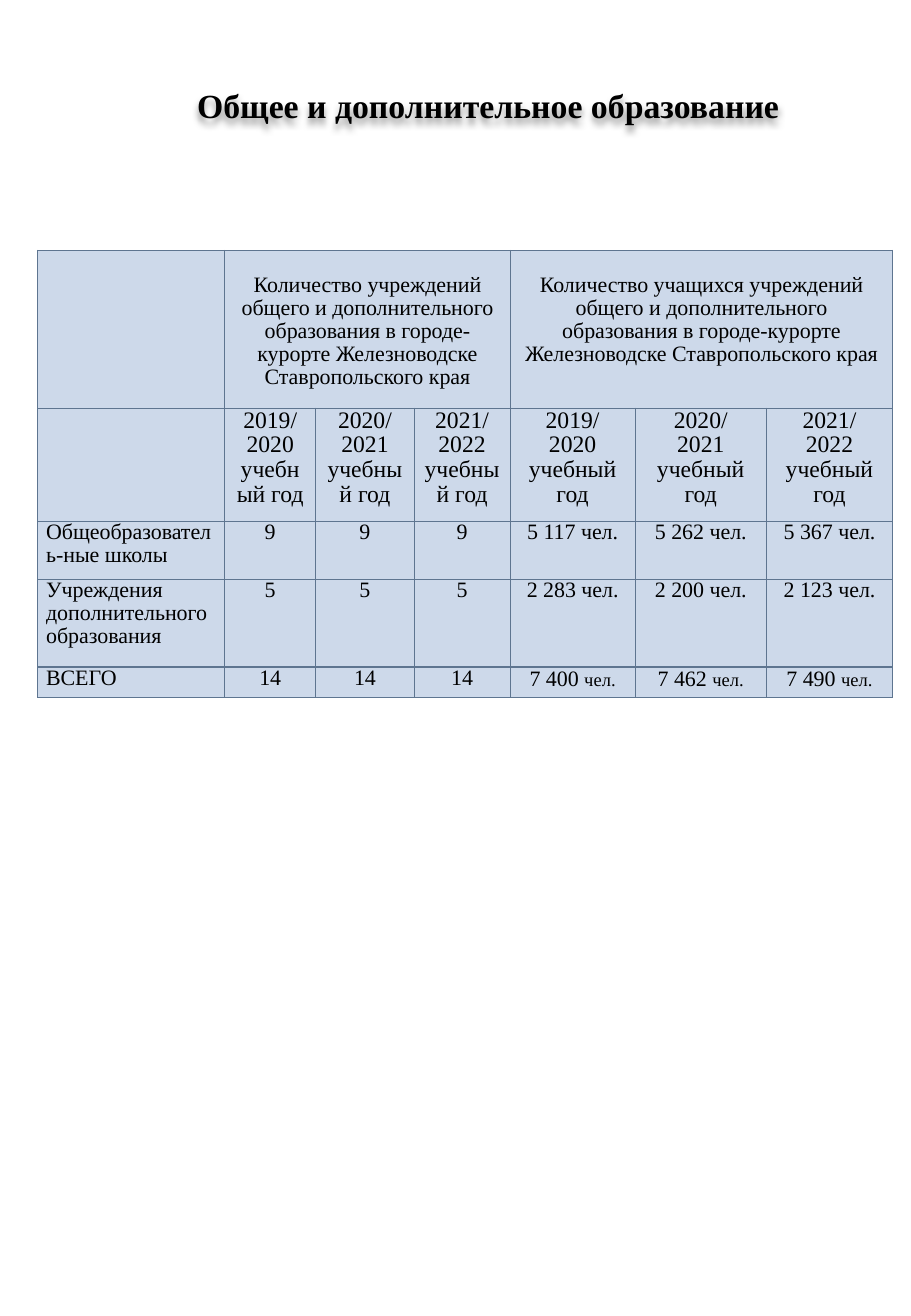
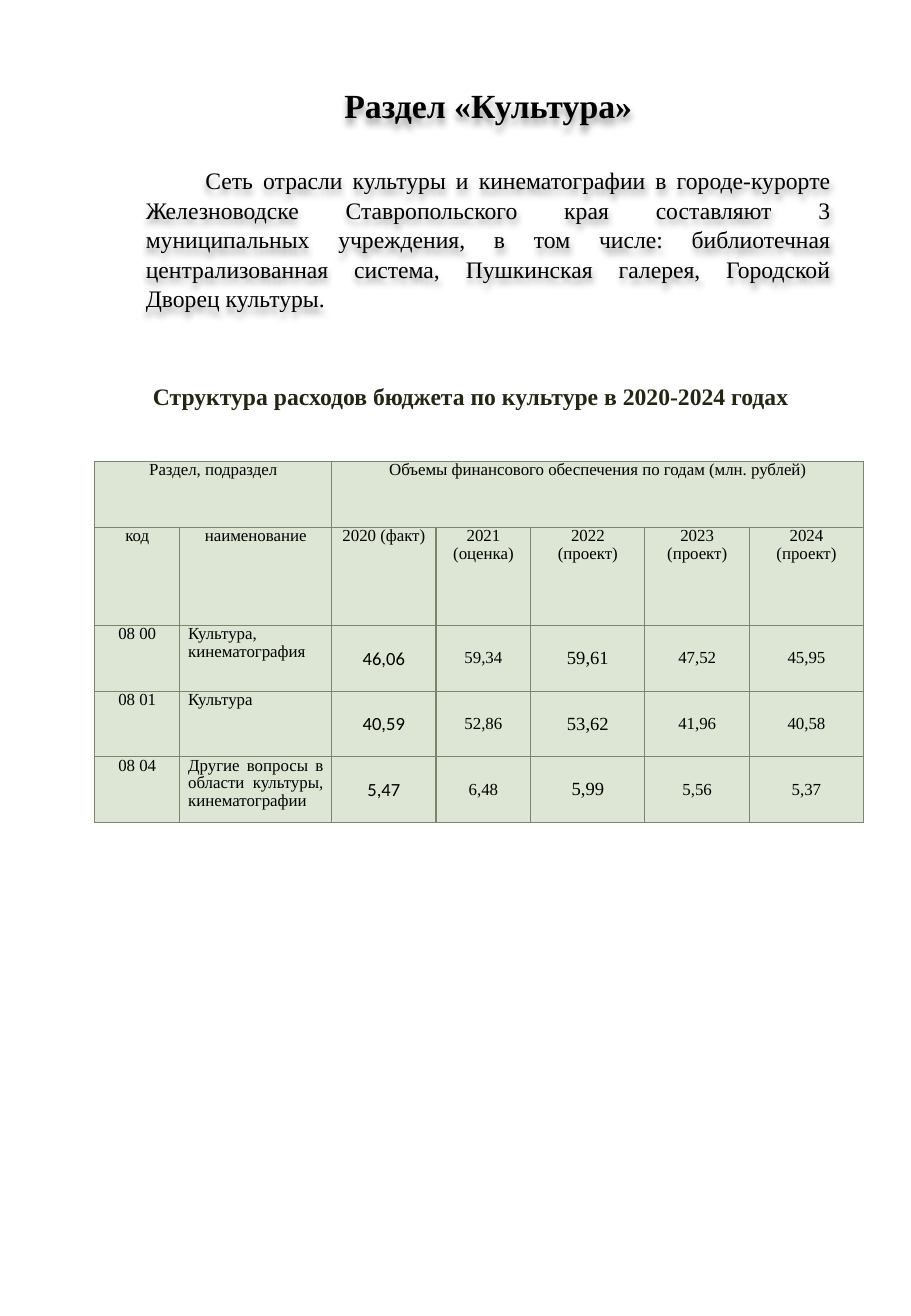
from lxml import etree
from pptx import Presentation
from pptx.dml.color import RGBColor
from pptx.enum.text import MSO_ANCHOR, MSO_AUTO_SIZE, PP_ALIGN
from pptx.oxml.ns import qn
from pptx.util import Inches, Pt

CENTER, JUSTIFY, LEFT = PP_ALIGN.CENTER, PP_ALIGN.JUSTIFY, PP_ALIGN.LEFT
TOP, MIDDLE = MSO_ANCHOR.TOP, MSO_ANCHOR.MIDDLE
NO_FIT = MSO_AUTO_SIZE.NONE
SERIF, SANS = "Times New Roman", "Calibri"
BLACK = RGBColor(0, 0, 0)
OLIVE = RGBColor(0x22, 0x26, 0x13)
BLUE_FILL = RGBColor(0xCD, 0xD9, 0xEA)
BLUE_LINE = RGBColor(0x5E, 0x75, 0x90)
GREEN_FILL = RGBColor(0xDD, 0xE6, 0xD4)
GREEN_LINE = RGBColor(0x7A, 0x86, 0x6C)
TITLE_BOX = (1.1, 0.65, 5.84, 0.5)
TITLE_ONLY, TITLE_AND_BODY = 5, 1


def add_span(para, text, size, font=SERIF, color=BLACK, bold=False):
    """Add one formatted run to a paragraph."""
    span = para.add_run()
    span.text = text
    span.font.name = font
    span.font.size = Pt(size)
    span.font.color.rgb = color
    span.font.bold = bold


def place(shape, box):
    """Move a shape to a box given in inches."""
    shape.left, shape.top, shape.width, shape.height = map(Inches, box)


def add_shadow(shape):
    """Give the text of an unfilled shape a soft shadow below it."""
    effects = etree.SubElement(shape.element.spPr, qn("a:effectLst"))
    shadow = etree.SubElement(effects, qn("a:outerShdw"), blurRad="50800",
                              dist="38100", dir="5400000", rotWithShape="0")
    color = etree.SubElement(shadow, qn("a:srgbClr"), val="000000")
    etree.SubElement(color, qn("a:alpha"), val="40000")


def fill_placeholder(shape, box, text, size, align, bold=False):
    """Place a placeholder and write one shadowed paragraph in it."""
    place(shape, box)
    frame = shape.text_frame
    frame.word_wrap = True
    frame.auto_size = NO_FIT
    frame.vertical_anchor = TOP
    para = frame.paragraphs[0]
    para.alignment = align
    para.space_before = Pt(0)
    add_span(para, text, size, bold=bold)
    add_shadow(shape)
    return para


def add_page(deck, layout, title):
    """Add a slide with the shared title style."""
    page = deck.slides.add_slide(deck.slide_layouts[layout])
    fill_placeholder(page.shapes.title, TITLE_BOX, title, 20, CENTER, bold=True)
    return page


def add_intro(page, box, text):
    """Write the justified introduction in the body placeholder."""
    para = fill_placeholder(page.placeholders[1], box, text, 14, JUSTIFY)
    para.line_spacing = 1.04
    props = para._p.get_or_add_pPr()
    props.set("marL", "0")
    props.set("indent", str(Inches(0.49)))
    etree.SubElement(props, qn("a:buNone"))


def add_caption(page, box, text):
    """Add the bold heading above a table."""
    caption = page.shapes.add_textbox(*map(Inches, box))
    frame = caption.text_frame
    frame.word_wrap = False
    frame.vertical_anchor = MIDDLE
    para = frame.paragraphs[0]
    para.alignment = LEFT
    add_span(para, text, 14, color=OLIVE, bold=True)


def set_borders(cell, color):
    """Draw a thin line on all four sides of a cell."""
    props = cell._tc.get_or_add_tcPr()
    for index, side in enumerate(("lnL", "lnR", "lnT", "lnB")):
        line = etree.Element(qn("a:" + side), w=str(Pt(0.75)))
        solid = etree.SubElement(line, qn("a:solidFill"))
        etree.SubElement(solid, qn("a:srgbClr"), val=str(color))
        props.insert(index, line)


def add_grid(page, box, widths, heights, fill, line):
    """Add a table with uniform fill, borders and margins."""
    shape = page.shapes.add_table(len(heights), len(widths), *map(Inches, box))
    table = shape.table
    for column, width in zip(table.columns, widths):
        column.width = Inches(width)
    for row, height in zip(table.rows, heights):
        row.height = Inches(height)
    for cell in table.iter_cells():
        cell.margin_left = cell.margin_right = Inches(0.07)
        cell.margin_top = cell.margin_bottom = 0
        cell.fill.solid()
        cell.fill.fore_color.rgb = fill
        set_borders(cell, line)
    return table


def write_cell(cell, text, size, align=CENTER, font=SERIF, unit=""):
    """Write the lines of a cell, with an optional smaller unit."""
    frame = cell.text_frame
    for index, content in enumerate(text.split("\n")):
        para = frame.add_paragraph() if index else frame.paragraphs[0]
        para.alignment = align
        para.line_spacing = 0.95
        add_span(para, content, size, font)
        if unit:
            add_span(para, unit, 11, font)


def merge_heading(table, first, last, text, size):
    """Merge cells of the top row under one heading."""
    cell = table.cell(0, first)
    cell.merge(table.cell(0, last))
    write_cell(cell, text, size)
    return cell


def add_school_table(page, box):
    """Add the table of institutions and pupils by school year."""
    table = add_grid(page, box, (1.54, 0.75, 0.81, 0.79, 1.03, 1.08, 1.04),
                     (1.3, 0.93, 0.48, 0.72, 0.25), BLUE_FILL, BLUE_LINE)
    place_name = "учреждений общего и дополнительного образования " \
                 "в городе-курорте Железноводске Ставропольского края"
    for first, subject in ((1, "Количество "), (4, "Количество учащихся ")):
        heading = merge_heading(table, first, first + 2, subject + place_name, 13)
        heading.margin_top = Inches(0.2)
    years = ("2019/\n2020 учебный год", "2020/\n2021 учебный год",
             "2021/\n2022\nучебный год")
    for column, year in enumerate(years * 2, 1):
        write_cell(table.cell(1, column), year, 14)
    rows = (
        ("Общеобразователь-ные школы", "9", ("5 117", "5 262", "5 367")),
        ("Учреждения дополнительного образования", "5", ("2 283", "2 200", "2 123")),
        ("ВСЕГО", "14", ("7 400", "7 462", "7 490")),
    )
    for row, (label, schools, pupils) in enumerate(rows, 2):
        write_cell(table.cell(row, 0), label, 13, JUSTIFY)
        for column, count in enumerate(pupils, 1):
            write_cell(table.cell(row, column), schools, 13)
            people = table.cell(row, column + 3)
            if label == "ВСЕГО":
                people.margin_top = Inches(0.01)
                write_cell(people, count + " ", 13, unit="чел.")
            else:
                write_cell(people, count + " чел.", 13)


def add_budget_table(page, box):
    """Add the table of culture spending by year."""
    table = add_grid(page, box, (0.7, 1.25, 0.86, 0.78, 0.94, 0.86, 0.94),
                     (0.54, 0.81, 0.54, 0.54, 0.54), GREEN_FILL, GREEN_LINE)
    merge_heading(table, 0, 1, "Раздел, подраздел", 10)
    merge_heading(table, 2, 6,
                  "Объемы финансового обеспечения по годам (млн. рублей)", 10)
    headings = ("код", "наименование", "2020 (факт)", "2021 (оценка)",
                "2022 (проект)", "2023 (проект)", "2024 (проект)")
    for column, heading in enumerate(headings):
        write_cell(table.cell(1, column), heading, 10)
    rows = (
        ("08 00", "Культура, кинематография",
         "46,06", "59,34", "59,61", "47,52", "45,95"),
        ("08 01", "Культура", "40,59", "52,86", "53,62", "41,96", "40,58"),
        ("08 04", "Другие вопросы в области культуры, кинематографии",
         "5,47", "6,48", "5,99", "5,56", "5,37"),
    )
    styles = ((11, SANS), (10, SERIF), (11, SERIF), (10, SERIF), (10, SERIF))
    for row, (code, label, *amounts) in enumerate(rows, 2):
        write_cell(table.cell(row, 0), code, 10)
        write_cell(table.cell(row, 1), label, 10, JUSTIFY)
        for column, (amount, (size, font)) in enumerate(zip(amounts, styles), 2):
            cell = table.cell(row, column)
            cell.vertical_anchor = MIDDLE
            write_cell(cell, amount, size, font=font)


def build_education(deck):
    """Build the slide on general and additional education."""
    page = add_page(deck, TITLE_ONLY, "Общее и дополнительное образование")
    add_school_table(page, (0.31, 2.06, 7.04, 3.68))


def build_culture(deck):
    """Build the slide on culture."""
    page = add_page(deck, TITLE_AND_BODY, "Раздел «Культура»")
    add_intro(page, (1.1, 1.31, 5.84, 1.35),
              "Сеть отрасли культуры и кинематографии в городе-курорте "
              "Железноводске Ставропольского края составляют 3 муниципальных "
              "учреждения, в том числе: библиотечная централизованная система, "
              "Пушкинская галерея, Городской Дворец культуры.")
    add_caption(page, (1.16, 3.09, 5.48, 0.34),
                "Структура расходов бюджета по культуре в 2020-2024 годах")
    add_budget_table(page, (0.78, 3.8, 6.33, 2.97))


def main():
    """Build and save the deck."""
    deck = Presentation()
    deck.slide_width, deck.slide_height = Inches(7.5), Inches(10.83)
    build_education(deck)
    build_culture(deck)
    deck.save("out.pptx")


if __name__ == "__main__":
    main()
